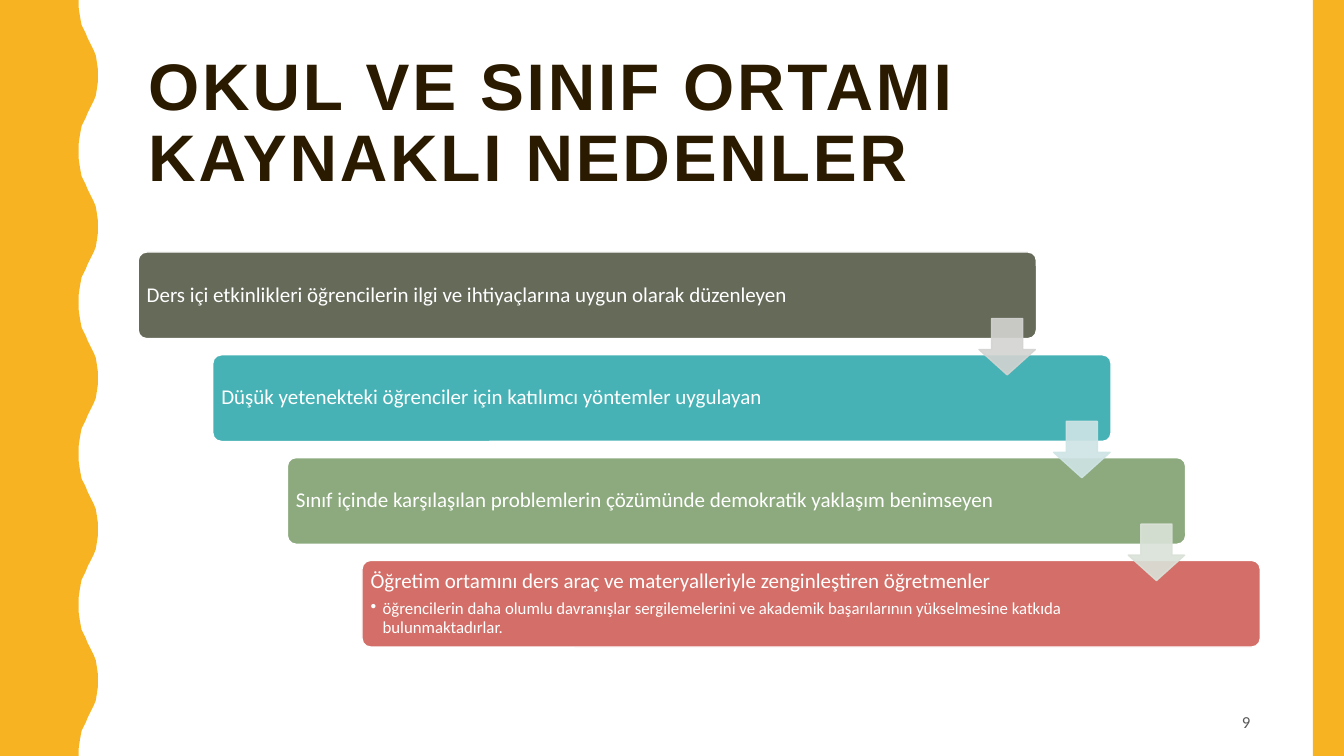
from pptx import Presentation
from pptx import util as u
from pptx.dml.color import RGBColor
from pptx.enum import shapes, text
from pptx.oxml.ns import qn
from lxml import etree

THEME = {
    "title_color": "2A1A00", "accent": "F8B323", "white": "FFFFFF", "grey": "595959",
    "bars": ["656A59", "46B2B5", "8CAA7E", "D36F68"],
    "arrows": ["D3D4D1", "CFE4E5", "DAE2D8"],
    "head_font": "Arial", "body_font": "Calibri",
    "title": 47, "body": 15, "small": 12,
}
BAR_TEXTS = [
    "Ders içi etkinlikleri öğrencilerin ilgi ve ihtiyaçlarına uygun olarak düzenleyen",
    "Düşük yetenekteki öğrenciler için katılımcı yöntemler uygulayan",
    "Sınıf içinde karşılaşılan problemlerin çözümünde demokratik yaklaşım benimseyen",
    "Öğretim ortamını ders araç ve materyalleriyle zenginleştiren öğretmenler",
]
SUB_TEXT = ("öğrencilerin daha olumlu davranışlar sergilemelerini ve akademik "
            "başarılarının yükselmesine katkıda bulunmaktadırlar.")
HALF_WAVE = [(0.78, 0), (0.78, 0.07), (0.79, 0.14), (0.8, 0.2), (0.81, 0.25), (0.83, 0.29),
             (0.85, 0.33), (0.87, 0.38), (0.89, 0.42), (0.91, 0.46), (0.93, 0.5),
             (0.95, 0.55), (0.96, 0.61), (0.97, 0.68), (0.97, 0.75)]
PERIOD = 1.5
BAR_LEFT, BAR_TOP, BAR_W, BAR_H = 1.37, 2.5, 8.91, 0.86
STEP_X, STEP_Y = 0.74, 1.02


def paint(sp, fill, line=None):
    sp.shadow.inherit = False
    sp.fill.solid()
    sp.fill.fore_color.rgb = RGBColor.from_string(fill)
    if line:
        sp.line.color.rgb = RGBColor.from_string(line)
        sp.line.width = u.Pt(1)
    else:
        sp.line.fill.background()


def style(p, size, color, font=THEME["body_font"], bold=False, align=text.PP_ALIGN.LEFT):
    p.font.size = u.Pt(size)
    p.font.name = font
    p.font.bold = bold
    p.font.color.rgb = RGBColor.from_string(color)
    p.alignment = align


prs = Presentation()
prs.slide_width, prs.slide_height = u.Inches(13.33), u.Inches(7.5)
s = prs.slides.add_slide(prs.slide_layouts[5])

title = s.shapes.title
title.left, title.top = u.Inches(1.37), u.Inches(0.42)
title.width, title.height = u.Inches(11.13), u.Inches(1.63)
tf = title.text_frame
tf.text = "OKUL VE SINIF ORTAMI KAYNAKLI NEDENLER"
tf.auto_size = text.MSO_AUTO_SIZE.NONE
tf.vertical_anchor = text.MSO_ANCHOR.MIDDLE
p = tf.paragraphs[0]
style(p, THEME["title"], THEME["title_color"], THEME["head_font"], bold=True)
p.line_spacing = 0.9
p.runs[0].font._element.set("spc", "200")

wave = HALF_WAVE + [(x, PERIOD - y) for x, y in reversed(HALF_WAVE[:-1])]
edge = [(u.Inches(x), u.Inches(y + PERIOD * i)) for i in range(5) for x, y in wave]
builder = s.shapes.build_freeform(0, 0)
builder.add_line_segments(edge + [(0, u.Inches(7.5))], close=True)
paint(builder.convert_to_shape(), THEME["accent"])

stripe = s.shapes.add_shape(shapes.MSO_SHAPE.RECTANGLE, u.Inches(13.02), 0,
                            u.Inches(0.31), u.Inches(7.5))
paint(stripe, THEME["accent"])

for i, (color, label) in enumerate(zip(THEME["bars"], BAR_TEXTS)):
    bar = s.shapes.add_shape(shapes.MSO_SHAPE.ROUNDED_RECTANGLE,
                             u.Inches(BAR_LEFT + STEP_X * i), u.Inches(BAR_TOP + STEP_Y * i),
                             u.Inches(BAR_W), u.Inches(BAR_H))
    bar.adjustments[0] = 0.1
    paint(bar, color, THEME["white"])
    tf = bar.text_frame
    tf.word_wrap = True
    tf.vertical_anchor = text.MSO_ANCHOR.MIDDLE
    tf.margin_left = tf.margin_top = tf.margin_bottom = u.Inches(0.06)
    tf.margin_right = u.Inches(1.36)
    p = tf.paragraphs[0]
    p.text = label
    style(p, THEME["body"], THEME["white"])
    p.line_spacing = 0.9

p.space_after = u.Pt(5)
p = tf.add_paragraph()
p.text = SUB_TEXT
p.level = 1
style(p, THEME["small"], THEME["white"])
p.line_spacing = 0.9
p.space_after = u.Pt(2)
pPr = p._p.get_or_add_pPr()
pPr.set("marL", str(u.Inches(0.12)))
pPr.set("indent", str(-u.Inches(0.12)))
bullet = etree.Element(qn("a:buChar"), char="•")
pPr.find(qn("a:spcAft")).addnext(bullet)

for i, color in enumerate(THEME["arrows"]):
    arrow = s.shapes.add_shape(shapes.MSO_SHAPE.DOWN_ARROW,
                               u.Inches(9.71 + STEP_X * i), u.Inches(3.16 + STEP_Y * i),
                               u.Inches(0.56), u.Inches(0.56))
    arrow.adjustments[0], arrow.adjustments[1] = 0.55, 0.45
    paint(arrow, color, color)
    for clr in arrow._element.spPr.iter(qn("a:srgbClr")):
        etree.SubElement(clr, qn("a:alpha"), val="90000")

number = s.shapes.add_textbox(u.Inches(9.42), u.Inches(6.97), u.Inches(3.08), u.Inches(0.38))
tf = number.text_frame
tf.word_wrap = True
tf.vertical_anchor = text.MSO_ANCHOR.MIDDLE
p = tf.paragraphs[0]
p.text = "9"
style(p, THEME["small"], THEME["grey"], align=text.PP_ALIGN.RIGHT)

prs.save("out.pptx")
